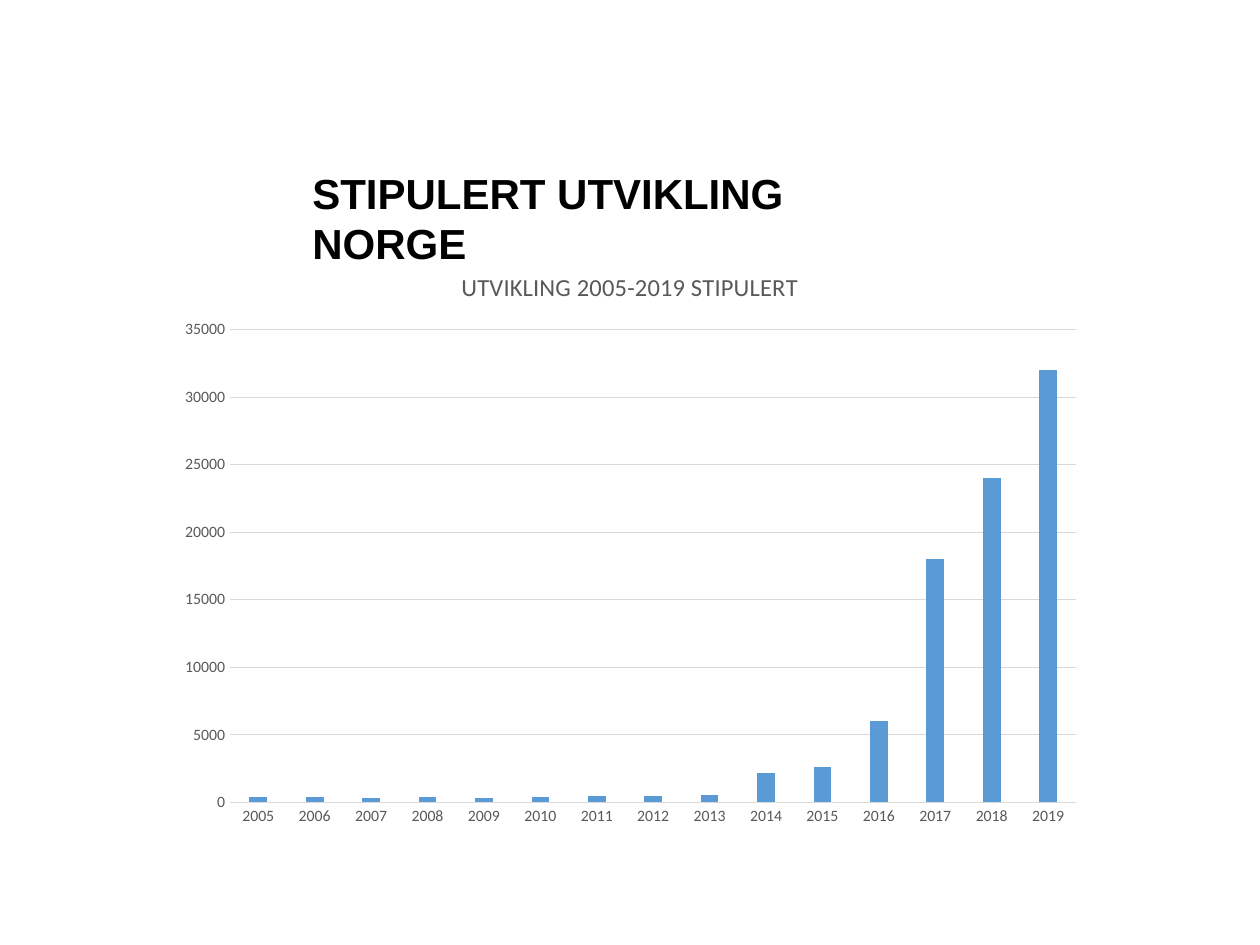
import lxml.etree
import pptx
import pptx.chart.data
import pptx.dml.color
import pptx.enum.chart
import pptx.enum.text
import pptx.oxml.ns
import pptx.util

Pt = pptx.util.Pt
RGBColor = pptx.dml.color.RGBColor
qn = pptx.oxml.ns.qn

BLACK = RGBColor(0x00, 0x00, 0x00)
GREY = RGBColor(0x59, 0x59, 0x59)
LIGHT_GREY = RGBColor(0xD9, 0xD9, 0xD9)
BLUE = RGBColor(0x5B, 0x9B, 0xD5)

YEARS = [str(year) for year in range(2005, 2020)]
COUNTS = [400, 400, 350, 400, 350, 400, 500, 500, 550,
          2200, 2600, 6000, 18000, 24000, 32000]


def write_text(frame, text, font="Calibri", size=10, color=BLACK, bold=False):
    span = frame.paragraphs[0].add_run()
    span.text = text
    span.font.name = font
    span.font.size = Pt(size)
    span.font.bold = bold
    span.font.color.rgb = color


deck = pptx.Presentation()
deck.slide_width, deck.slide_height = Pt(720), Pt(540)
page = deck.slides.add_slide(deck.slide_layouts[6])

# Heading
heading = page.shapes.add_textbox(Pt(171.4), Pt(92.2), Pt(376), Pt(36))
heading.text_frame.word_wrap = True
heading.text_frame.vertical_anchor = pptx.enum.text.MSO_ANCHOR.TOP
write_text(heading.text_frame, "STIPULERT UTVIKLING NORGE",
           font="Arial", size=24, bold=True)

# Column chart
data = pptx.chart.data.CategoryChartData()
data.categories = YEARS
data.add_series("Series 1", COUNTS)
chart = page.shapes.add_chart(
    pptx.enum.chart.XL_CHART_TYPE.COLUMN_CLUSTERED,
    Pt(94.3), Pt(141.1), Pt(531.4), Pt(337.7), data).chart
chart.has_legend = False
chart.font.name = "Calibri"
chart.font.size = Pt(10)
chart.has_title = True
write_text(chart.chart_title.text_frame, "UTVIKLING 2005-2019 STIPULERT",
           size=14, color=GREY)
chart.chart_title.include_in_layout = False

plot = chart.plots[0]
plot.vary_by_categories = False
plot.gap_width = 219
plot.overlap = -27
columns = plot.series[0].format.fill
columns.solid()
columns.fore_color.rgb = BLUE

for axis in (chart.category_axis, chart.value_axis):
    axis.major_tick_mark = pptx.enum.chart.XL_TICK_MARK.NONE
    axis.minor_tick_mark = pptx.enum.chart.XL_TICK_MARK.NONE
    axis.tick_labels.font.name = "Calibri"
    axis.tick_labels.font.size = Pt(9)
    axis.tick_labels.font.color.rgb = GREY

chart.value_axis.minimum_scale = 0
chart.value_axis.maximum_scale = 35000
chart.value_axis.major_unit = 5000
chart.value_axis.format.line.fill.background()
chart.value_axis.has_major_gridlines = True
for line in (chart.category_axis.format.line,
             chart.value_axis.major_gridlines.format.line):
    line.color.rgb = LIGHT_GREY
    line.width = Pt(0.75)

# Plot area position, as fractions of the chart
plot_area = chart.element.find(".//" + qn("c:plotArea"))
layout = plot_area.find(qn("c:layout"))
if layout is None:
    layout = lxml.etree.Element(qn("c:layout"))
    plot_area.insert(0, layout)
manual = lxml.etree.SubElement(layout, qn("c:manualLayout"))
for tag, value in (("layoutTarget", "inner"), ("xMode", "edge"), ("yMode", "edge"),
                   ("x", "0.07"), ("y", "0.14"), ("w", "0.91"), ("h", "0.8")):
    lxml.etree.SubElement(manual, qn("c:" + tag)).set("val", value)

deck.save("out.pptx")
